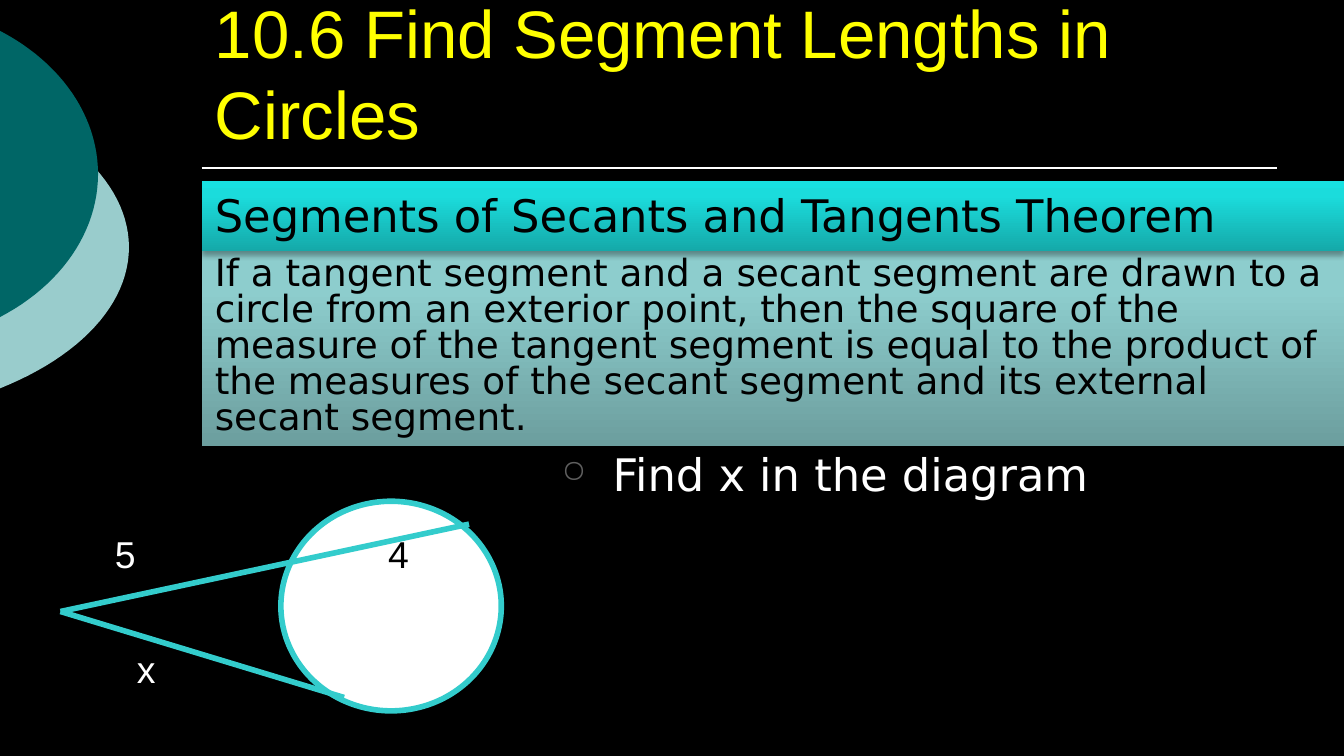
from dataclasses import dataclass

from lxml import etree
from pptx import Presentation
from pptx.dml.color import RGBColor
from pptx.enum.shapes import MSO_CONNECTOR, MSO_SHAPE
from pptx.enum.text import MSO_ANCHOR, PP_ALIGN
from pptx.oxml.ns import qn
from pptx.util import Emu, Inches, Pt

STRAIGHT = MSO_CONNECTOR.STRAIGHT
RECTANGLE, OVAL = MSO_SHAPE.RECTANGLE, MSO_SHAPE.OVAL
TOP, BOTTOM = MSO_ANCHOR.TOP, MSO_ANCHOR.BOTTOM
LEFT = PP_ALIGN.LEFT

GRID_UNIT = Inches(0.1)  # one column or row
SLIDE_COLUMNS = 100
SLIDE_ROWS = SLIDE_COLUMNS * 9 / 16
NARROW, WIDE = "Arial", "DejaVu Sans"
BLACK, WHITE, YELLOW, TURQUOISE = "000000", "FFFFFF", "FFFF00", "33CCCC"
CURVE_STEPS = 24
CONTENT_LEFT = 15
PANEL_WIDTH = SLIDE_COLUMNS - CONTENT_LEFT
SECANT_ORIGIN = (4.5, 45.5)


@dataclass(frozen=True)
class Box:
    column: float
    row: float
    columns: float
    rows: float

    def lengths(self) -> list[Emu]:
        return [grid(value) for value in (self.column, self.row, self.columns, self.rows)]


@dataclass(frozen=True)
class Label:
    text: str
    box: Box
    size: float
    color: str
    font: str = NARROW
    anchor: MSO_ANCHOR = TOP
    line_spacing: float = 1.0


@dataclass(frozen=True)
class Panel:
    label: Label
    gradient: tuple[tuple[int, str], ...]


@dataclass(frozen=True)
class EdgeDisc:
    """Upper Bézier curve from the slide's left edge to the disc's rightmost point."""
    curve: tuple[tuple[float, float], ...]
    color: str


@dataclass(frozen=True)
class Segment:
    start: tuple[float, float]
    end: tuple[float, float]
    color: str
    width: float


DISCS = (
    EdgeDisc(((0, 7.9), (6, 10.3), (9.6, 14.2), (9.6, 18.4)), "99CCCC"),
    EdgeDisc(((0, 2.3), (4.6, 4.7), (7.3, 8.7), (7.3, 12.95)), "006666"),
)
TITLE_RULE = Segment((CONTENT_LEFT, 12.5), (95, 12.5), WHITE, 1)
TITLE = Label("10.6 Find Segment Lengths in Circles", Box(CONTENT_LEFT, 2.5, 80, 9.35),
              36, YELLOW, anchor=BOTTOM)
TASK = Label("Find x in the diagram", Box(40.8, 33.5, 59.2, 15.6), 24, WHITE, WIDE,
             line_spacing=0.8)
CIRCLE = Box(20.9, 37.3, 16.4, 15.6)
SEGMENTS = (
    Segment(SECANT_ORIGIN, (25.6, 51.9), TURQUOISE, 3),
    Segment(SECANT_ORIGIN, (34.9, 39), TURQUOISE, 3),
)
LENGTH_LABELS = tuple(
    Label(text, Box(column, row, 4.7, 4.3), 20, color)
    for text, column, row, color in (
        (" 5", 6.8, 39, WHITE), ("4", 27.9, 39, BLACK), ("x", 9.2, 47.6, WHITE))
)
PANELS = (
    Panel(Label("If a tangent segment and a secant segment are drawn to a circle from an "
                "exterior point, then the square of the measure of the tangent segment is "
                "equal to the product of the measures of the secant segment and its "
                "external secant segment.",
                Box(CONTENT_LEFT, 18.7, PANEL_WIDTH, 14.5), 20, BLACK, WIDE,
                line_spacing=0.8),
          ((0, "6C9E9E"), (80, "8DCDCD"), (100, "8CCFCF"))),
    Panel(Label("Segments of Secants and Tangents Theorem",
                Box(CONTENT_LEFT, 13.5, PANEL_WIDTH, 5.2), 24, BLACK, WIDE),
          ((0, "15A9A9"), (80, "1BDCDC"), (100, "18E1E1"))),
)


def grid(value: float) -> Emu:
    return Emu(round(value * GRID_UNIT))


def rgb(color: str) -> RGBColor:
    return RGBColor.from_string(color)


def add_element(parent, tag: str, **attributes):
    return etree.SubElement(parent, qn(tag),
                            {name: str(value) for name, value in attributes.items()})


def add_color(parent, color: str):
    return add_element(parent, "a:srgbClr", val=color)


def write_text(shape, label: Label):
    frame = shape.text_frame
    frame.word_wrap = True
    frame.vertical_anchor = label.anchor
    paragraph = frame.paragraphs[0]
    paragraph.text = label.text
    paragraph.alignment = LEFT
    paragraph.line_spacing = label.line_spacing
    paragraph.font.name = label.font
    paragraph.font.size = Pt(label.size)
    paragraph.font.color.rgb = rgb(label.color)
    return paragraph


def add_label(slide, label: Label):
    return write_text(slide.shapes.add_textbox(*label.box.lengths()), label)


def add_bullet_label(slide, label: Label) -> None:
    paragraph = add_label(slide, label)
    paragraph.space_before = Pt(0.2 * label.size)
    properties = paragraph._p.get_or_add_pPr()
    properties.set("marL", str(Inches(0.38)))
    properties.set("indent", str(-Inches(0.38)))
    bullet = [etree.Element(qn(tag)) for tag in ("a:buClr", "a:buSzPct", "a:buChar")]
    add_color(bullet[0], "5F5F5F")
    bullet[1].set("val", "70000")
    bullet[2].set("char", "○")
    position = list(properties).index(properties.find(qn("a:defRPr")))
    properties[position:position] = bullet


def add_segment(slide, segment: Segment) -> None:
    ends = [grid(value) for value in (*segment.start, *segment.end)]
    connector = slide.shapes.add_connector(STRAIGHT, *ends)
    connector.line.color.rgb = rgb(segment.color)
    connector.line.width = Pt(segment.width)
    add_element(connector._element.spPr, "a:effectLst")


def add_edge_disc(slide, disc: EdgeDisc) -> None:
    upper = []
    for step in range(CURVE_STEPS + 1):
        t = step / CURVE_STEPS
        weights = ((1 - t) ** 3, 3 * t * (1 - t) ** 2, 3 * t ** 2 * (1 - t), t ** 3)
        upper.append(tuple(sum(weight * point[axis] for weight, point
                               in zip(weights, disc.curve)) for axis in (0, 1)))
    middle = disc.curve[-1][1]
    lower = [(x, 2 * middle - y) for x, y in reversed(upper[:-1])]
    points = [(grid(x), grid(y)) for x, y in upper + lower]
    builder = slide.shapes.build_freeform(*points[0])
    builder.add_line_segments(points[1:], close=True)
    shape = builder.convert_to_shape()
    shape.shadow.inherit = False
    shape.fill.solid()
    shape.fill.fore_color.rgb = rgb(disc.color)
    shape.line.fill.background()


def add_circle(slide, box: Box) -> None:
    circle = slide.shapes.add_shape(OVAL, *box.lengths())
    circle.shadow.inherit = False
    circle.fill.solid()
    circle.fill.fore_color.rgb = rgb(WHITE)
    circle.line.color.rgb = rgb(TURQUOISE)
    circle.line.width = Pt(3)


def add_panel(slide, panel: Panel) -> None:
    shape = slide.shapes.add_shape(RECTANGLE, *panel.label.box.lengths())
    shape.line.fill.background()
    shape.fill.gradient()
    shape.fill.gradient_angle = 90
    properties = shape._element.spPr
    stops = properties.find(f"{qn('a:gradFill')}/{qn('a:gsLst')}")
    for stop in list(stops):
        stops.remove(stop)
    for percent, color in panel.gradient:
        add_color(add_element(stops, "a:gs", pos=percent * 1000), color)
    shape.shadow.inherit = False
    shadow = add_element(properties.find(qn("a:effectLst")), "a:outerShdw",
                         blurRad=Pt(3.1), dist=Pt(1.8), dir=90 * 60000, rotWithShape=0)
    add_element(add_color(shadow, BLACK), "a:alpha", val=35000)
    write_text(shape, panel.label)


def main() -> None:
    presentation = Presentation()
    presentation.slide_width = grid(SLIDE_COLUMNS)
    presentation.slide_height = grid(SLIDE_ROWS)
    slide = presentation.slides.add_slide(presentation.slide_layouts[6])
    slide.background.fill.solid()
    slide.background.fill.fore_color.rgb = rgb(BLACK)
    for disc in DISCS:
        add_edge_disc(slide, disc)
    add_segment(slide, TITLE_RULE)
    add_label(slide, TITLE)
    add_bullet_label(slide, TASK)
    add_circle(slide, CIRCLE)
    for segment in SEGMENTS:
        add_segment(slide, segment)
    for label in LENGTH_LABELS:
        add_label(slide, label)
    for panel in PANELS:
        add_panel(slide, panel)
    presentation.save("out.pptx")


if __name__ == "__main__":
    main()
